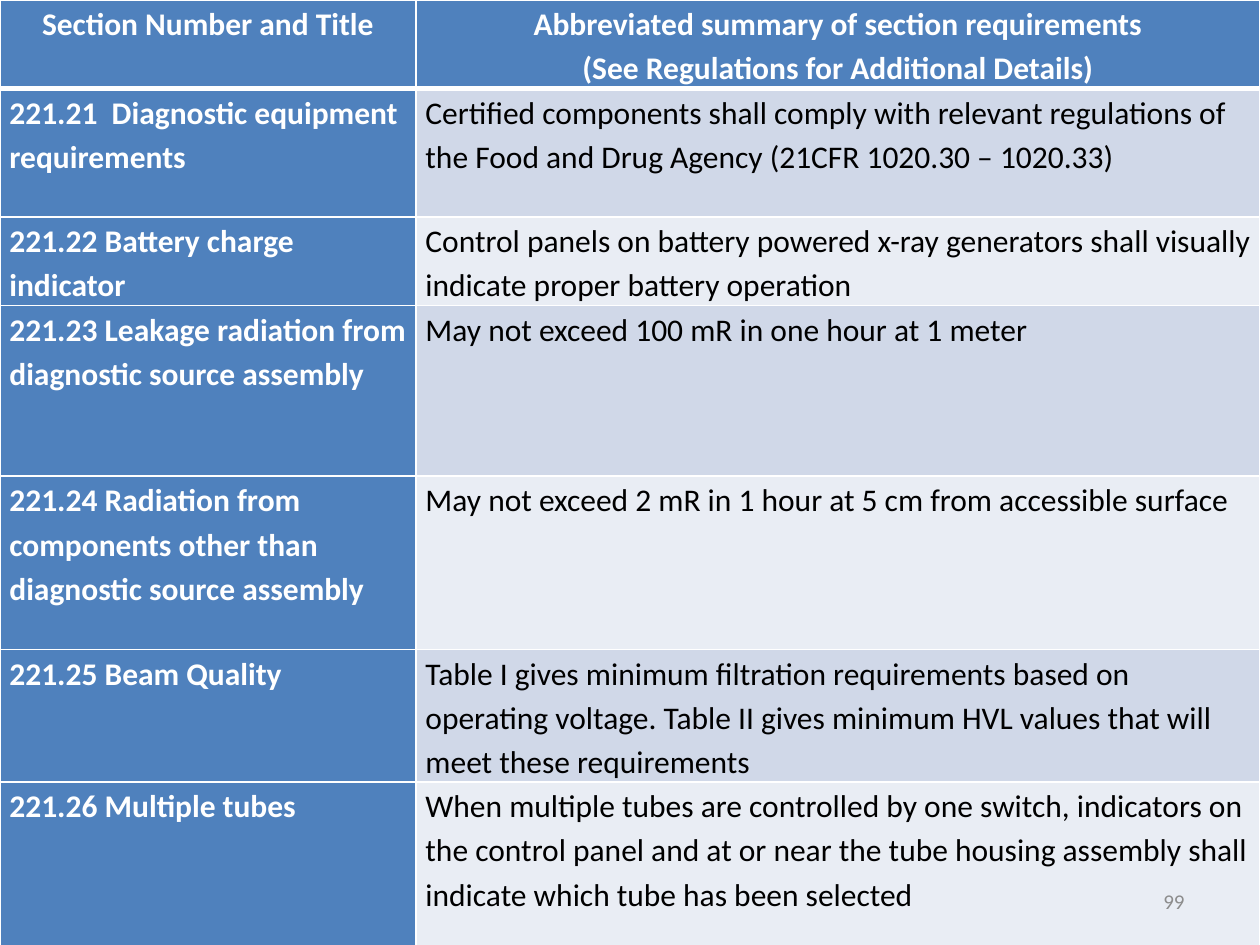
from pptx import Presentation
from pptx.dml.color import RGBColor
from pptx.enum.text import MSO_ANCHOR, PP_ALIGN
from pptx.oxml import parse_xml
from pptx.oxml.ns import nsdecls
from pptx.util import Pt

LEFT, CENTER, RIGHT = PP_ALIGN.LEFT, PP_ALIGN.CENTER, PP_ALIGN.RIGHT
TOP, MIDDLE = MSO_ANCHOR.TOP, MSO_ANCHOR.MIDDLE

# Content
HEAD = (
    "Section Number and Title",
    "Abbreviated summary of section requirements\n"
    "(See Regulations for Additional Details)",
)
RULES = [
    ("221.21  Diagnostic equipment requirements",
     "Certified components shall comply with relevant regulations of the "
     "Food and Drug Agency (21CFR 1020.30 – 1020.33)"),
    ("221.22 Battery charge indicator",
     "Control panels on battery powered x-ray generators shall visually "
     "indicate proper battery operation"),
    ("221.23 Leakage radiation from diagnostic source assembly",
     "May not exceed 100 mR in one hour at 1 meter"),
    ("221.24 Radiation from components other than diagnostic source assembly",
     "May not exceed 2 mR in 1 hour at 5 cm from accessible surface"),
    ("221.25 Beam Quality",
     "Table I gives minimum filtration requirements based on operating "
     "voltage. Table II gives minimum HVL values that will meet these "
     "requirements"),
    ("221.26 Multiple tubes",
     "When multiple tubes are controlled by one switch, indicators on the "
     "control panel and at or near the tube housing assembly shall indicate "
     "which tube has been selected"),
]
PAGE = "99"

# Theme and sizes, in points
THEME = dict(font="Calibri", size=18, small=12, white="FFFFFF", black="000000",
             gray="8C8C8C", blue="4F81BD", bands=("D0D8E8", "E9EDF4"))
WIDE, HIGH = 720, 540
COLS = (237.75, 482.25)
ROWS = (50.5, 73.5, 50.5, 97.5, 99, 75.5, 93.5)
PAD = 5.4
THIN, THICK = 1, 3


def write(frame, text, size=THEME["size"], color=THEME["black"], bold=False,
          align=LEFT, gap=1.0):
    frame.word_wrap = True
    frame.text = text
    for para in frame.paragraphs:
        para.alignment = align
        para.line_spacing = gap
        font = para.runs[0].font
        font.name, font.size, font.bold = THEME["font"], Pt(size), bold
        font.color.rgb = RGBColor.from_string(color)


def edge(cell, row):
    # The rule between the header and the body is thick
    widths = dict(L=THIN, R=THIN, T=THICK if row == 1 else THIN,
                  B=THICK if row == 0 else THIN)
    props = cell._tc.get_or_add_tcPr()
    for side, width in widths.items():
        props.append(parse_xml(
            f'<a:ln{side} {nsdecls("a")} w="{Pt(width)}"><a:solidFill>'
            f'<a:srgbClr val="{THEME["white"]}"/></a:solidFill></a:ln{side}>'))


def grid(slide):
    lines = [HEAD] + RULES
    table = slide.shapes.add_table(len(lines), len(COLS), 0, 0,
                                   Pt(WIDE), Pt(HIGH)).table
    for col, width in zip(table.columns, COLS):
        col.width = Pt(width)
    for row, height in zip(table.rows, ROWS):
        row.height = Pt(height)
    for r, line in enumerate(lines):
        for c, text in enumerate(line):
            cell = table.cell(r, c)
            label = r == 0 or c == 0
            cell.margin_left = cell.margin_right = Pt(PAD)
            cell.margin_top = cell.margin_bottom = 0
            cell.vertical_anchor = TOP
            edge(cell, r)
            cell.fill.solid()
            cell.fill.fore_color.rgb = RGBColor.from_string(
                THEME["blue"] if label else THEME["bands"][(r - 1) % 2])
            write(cell.text_frame, text, bold=label, gap=1.15,
                  color=THEME["white" if label else "black"],
                  align=LEFT if r else CENTER)


def main():
    deck = Presentation()
    deck.slide_width, deck.slide_height = Pt(WIDE), Pt(HIGH)
    slide = deck.slides.add_slide(deck.slide_layouts[6])

    # Table of section rules
    grid(slide)

    # Page number
    box = slide.shapes.add_textbox(Pt(516), Pt(500.5), Pt(168), Pt(28.75))
    box.text_frame.vertical_anchor = MIDDLE
    write(box.text_frame, PAGE, size=THEME["small"], color=THEME["gray"],
          align=RIGHT)

    deck.save("out.pptx")


if __name__ == "__main__":
    main()
